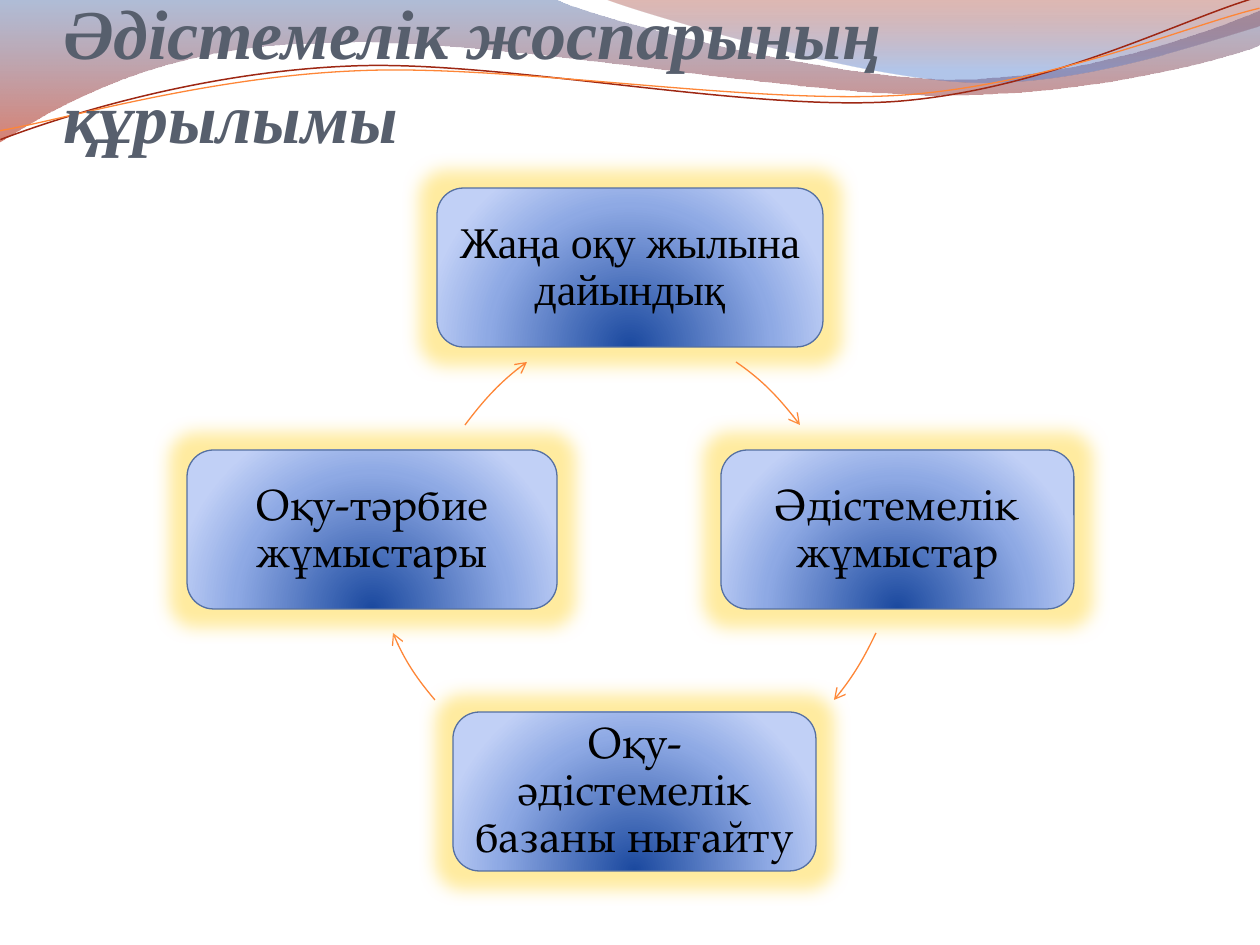
import dataclasses
import math

import lxml.etree
import pptx
import pptx.dml.color
import pptx.enum.shapes
import pptx.enum.text
import pptx.oxml.ns
import pptx.util

PX = 914400 / 126
QN = pptx.oxml.ns.qn


@dataclasses.dataclass(frozen=True)
class Theme:
    """Colours, fonts and type sizes of the deck."""
    title: str = "575F6D"
    text: str = "000000"
    accent: str = "FE8637"
    dark_accent: str = "9E2713"
    card_line: str = "5570A2"
    glow: str = "FFE88F"
    card_stops: tuple = ((0, "1B499F", 100), (68, "8EA9E4", 100), (100, "C1D0F6", 100))
    wide_stops: tuple = ((0, "4F6EA8", 45), (100, "B61A00", 55))
    corner_stops: tuple = ((0, "951500", 30), (80, "5681D1", 45))
    serif: str = "Times New Roman"
    book: str = "TeX Gyre Pagella"
    title_size: int = 40
    card_size: int = 25
    thin: float = 0.75


THEME = Theme()
STRAND_TILT = -2.7
ARROW_FRAME = 525

WAVES = (
    (THEME.wide_stops, (-1, -1, 1262, 143),
     ((0, -1), (554, -1), (600, 21, 837, 79, 955, 79), (1075, 79, 1207, 33, 1260, 11),
      (1261, 45), (1239, 55, 1096, 96, 940, 95), (784, 95, 481, 35, 324, 43),
      (163, 44, 58, 105, -1, 142), (0, -1))),
    (THEME.corner_stops, (604, -1, 656, 88),
     ((604, -1), (641, 14, 859, 78, 969, 82), (1079, 87, 1211, 40, 1260, 26),
      (1260, 0), (604, -1))),
)
STRANDS = (
    (THEME.dark_accent, 0.85, (-3, 28, 1263, 89),
     ((0, 140), (60, 117, 199, 72, 349, 66), (498, 59, 747, 112, 898, 101),
      (1050, 89, 1182, 19, 1257, -3))),
    (THEME.accent, THEME.thin, (-3, 38, 1264, 73),
     ((0, 131), (59, 121, 207, 77, 357, 71), (508, 64, 752, 105, 903, 95),
      (1053, 84, 1186, 26, 1260, 8))),
)
CARDS = (
    ("Жаңа оқу жылына дайындық", THEME.serif, 250, 0, 386),
    ("Әдістемелік жұмыстар", THEME.book, 534, 1, 353),
    ("Оқу-әдістемелік базаны нығайту", THEME.book, 266, 2, 363),
    ("Оқу-тәрбие жұмыстары", THEME.book, 0, 1, 370),
)
ARROWS = (
    ((137, 127), ((549, 174), (574, 191, 595, 213, 613, 237))),
    ((185, 79), ((689, 445), (677, 470, 664, 492, 647, 512))),
    ((185, 79), ((248, 512), (231, 492, 216, 470, 206, 445))),
    ((231, 124), ((278, 237), (296, 213, 316, 191, 340, 174))),
)


def px(length):
    """Turn pixels into EMU."""
    return pptx.util.Emu(round(length * PX))


def rgb(value):
    """Return the colour for a hexadecimal value."""
    return pptx.dml.color.RGBColor.from_string(value)


def assign(target, values):
    """Set attributes from a dict of format values."""
    for name, value in values.items():
        setattr(target, name, value)


def add_node(parent, tag, **attributes):
    """Append a DrawingML element with the given attributes."""
    node = lxml.etree.SubElement(parent, QN(tag))
    for name, value in attributes.items():
        node.set(name, str(value))
    return node


def add_color(parent, value, alpha):
    """Append a colour with an opacity in percent."""
    color = add_node(parent, "a:srgbClr", val=value)
    if alpha < 100:
        add_node(color, "a:alpha", val=alpha * 1000)


def set_gradient(shape, stops, radial=False):
    """Fill a shape with a vertical or radial gradient."""
    shape.fill.gradient()
    gradient = shape._element.spPr.find(QN("a:gradFill"))
    for child in list(gradient):
        gradient.remove(child)
    stop_list = add_node(gradient, "a:gsLst")
    for position, color, alpha in stops:
        add_color(add_node(stop_list, "a:gs", pos=position * 1000), color, alpha)
    if radial:
        circle = add_node(gradient, "a:path", path="circle")
        add_node(circle, "a:fillToRect", l=50000, t=130000, r=50000, b=-30000)
    else:
        add_node(gradient, "a:lin", ang=5400000, scaled=0)


def set_line(shape, color, width):
    """Give a shape a solid outline."""
    shape.line.color.rgb = rgb(color)
    shape.line.width = pptx.util.Pt(width)


def localize(x, y, frame, tilt):
    """Turn a point into the coordinates of a frame tilted about its centre."""
    left, top, width, height = frame
    angle = math.radians(-tilt)
    dx, dy = x - left - width / 2, y - top - height / 2
    return (round(width / 2 + dx * math.cos(angle) - dy * math.sin(angle)),
            round(height / 2 + dx * math.sin(angle) + dy * math.cos(angle)))


def add_outline(page, left, top, frame, outline, tilt=0, close=False):
    """Draw straight and cubic segments as a freeform within a frame."""
    x, y, width, height = frame
    builder = page.shapes.build_freeform(left + x, top + y, scale=PX)
    builder.add_line_segments([(left + x + width, top + y + height)], close=False)
    shape = builder.convert_to_shape()
    shape.shadow.inherit = False
    shape.rotation = tilt % 360
    track = shape._element.spPr.find(".//" + QN("a:path"))
    for child in list(track):
        track.remove(child)
    for index, segment in enumerate(outline):
        tag = "a:cubicBezTo" if len(segment) == 6 else "a:lnTo" if index else "a:moveTo"
        node = add_node(track, tag)
        for knot in zip(segment[::2], segment[1::2]):
            local_x, local_y = localize(*knot, frame, tilt)
            add_node(node, "a:pt", x=local_x, y=local_y)
    if close:
        add_node(track, "a:close")
    return shape


def add_curve(page, left, top, frame, outline, color, width, tilt=0):
    """Draw an open, unfilled curve."""
    curve = add_outline(page, left, top, frame, outline, tilt)
    curve.fill.background()
    set_line(curve, color, width)
    return curve


def add_header(page, left, top):
    """Draw the translucent waves and the two strands."""
    for stops, frame, outline in WAVES:
        wave = add_outline(page, left, top, frame, outline, close=True)
        set_gradient(wave, stops)
        wave.line.fill.background()
    for color, width, frame, outline in STRANDS:
        add_curve(page, left, top, frame, outline, color, width, STRAND_TILT)


def write(shape, text, frame_format, para_format, font_format, color):
    """Put one formatted paragraph in a shape."""
    frame = shape.text_frame
    frame.text = text
    assign(frame, frame_format)
    para = frame.paragraphs[0]
    assign(para, para_format)
    span = para.runs[0]
    assign(span.font, font_format)
    span.font.color.rgb = rgb(color)


def add_title(page, left, top, width, height):
    """Place the title placeholder above the waves."""
    title = page.shapes.title
    page.shapes._spTree.append(title._element)
    assign(title, dict(left=px(left), top=px(top), width=px(width), height=px(height)))
    write(title, "Әдістемелік жоспарының құрылымы",
          dict(auto_size=pptx.enum.text.MSO_AUTO_SIZE.NONE, word_wrap=True,
               vertical_anchor=pptx.enum.text.MSO_ANCHOR.BOTTOM,
               margin_left=0, margin_right=0, margin_top=px(6), margin_bottom=0),
          dict(alignment=pptx.enum.text.PP_ALIGN.LEFT),
          dict(name=THEME.serif, size=pptx.util.Pt(THEME.title_size), bold=True, italic=True),
          THEME.title)


def add_card(page, text, font, left, top, width, height):
    """Draw one glowing rounded card."""
    kind = pptx.enum.shapes.MSO_SHAPE.ROUNDED_RECTANGLE
    card = page.shapes.add_shape(kind, px(left), px(top), px(width), px(height))
    card.shadow.inherit = False
    set_gradient(card, THEME.card_stops, radial=True)
    set_line(card, THEME.card_line, THEME.thin)
    effects = card._element.spPr.find(QN("a:effectLst"))
    add_color(add_node(effects, "a:glow", rad=px(35)), THEME.glow, 85)
    margins = dict.fromkeys(("margin_left", "margin_right", "margin_top", "margin_bottom"), px(12))
    write(card, text,
          dict(margins, word_wrap=True, vertical_anchor=pptx.enum.text.MSO_ANCHOR.MIDDLE),
          dict(alignment=pptx.enum.text.PP_ALIGN.CENTER, line_spacing=0.9),
          dict(name=font, size=pptx.util.Pt(THEME.card_size)), THEME.text)


def add_cycle(page, left, top, height=159, pitch=262):
    """Draw the four cards, each followed by its arrow to the next."""
    for (text, font, offset, row, width), (corner, outline) in zip(CARDS, ARROWS):
        add_card(page, text, font, left + offset, top + row * pitch, width, height)
        frame = (*corner, ARROW_FRAME, ARROW_FRAME)
        arrow = add_curve(page, left, top, frame, outline, THEME.accent, THEME.thin)
        add_node(arrow.line._get_or_add_ln(), "a:tailEnd", type="arrow")


def main():
    """Build and save the deck."""
    deck = pptx.Presentation()
    assign(deck, dict(slide_width=px(1260), slide_height=px(945)))
    page = deck.slides.add_slide(deck.slide_layouts[5])
    add_header(page, 0, 0)
    add_title(page, 63, 50, 1134, 108)
    add_cycle(page, 187, 188)
    deck.save("out.pptx")


if __name__ == "__main__":
    main()
